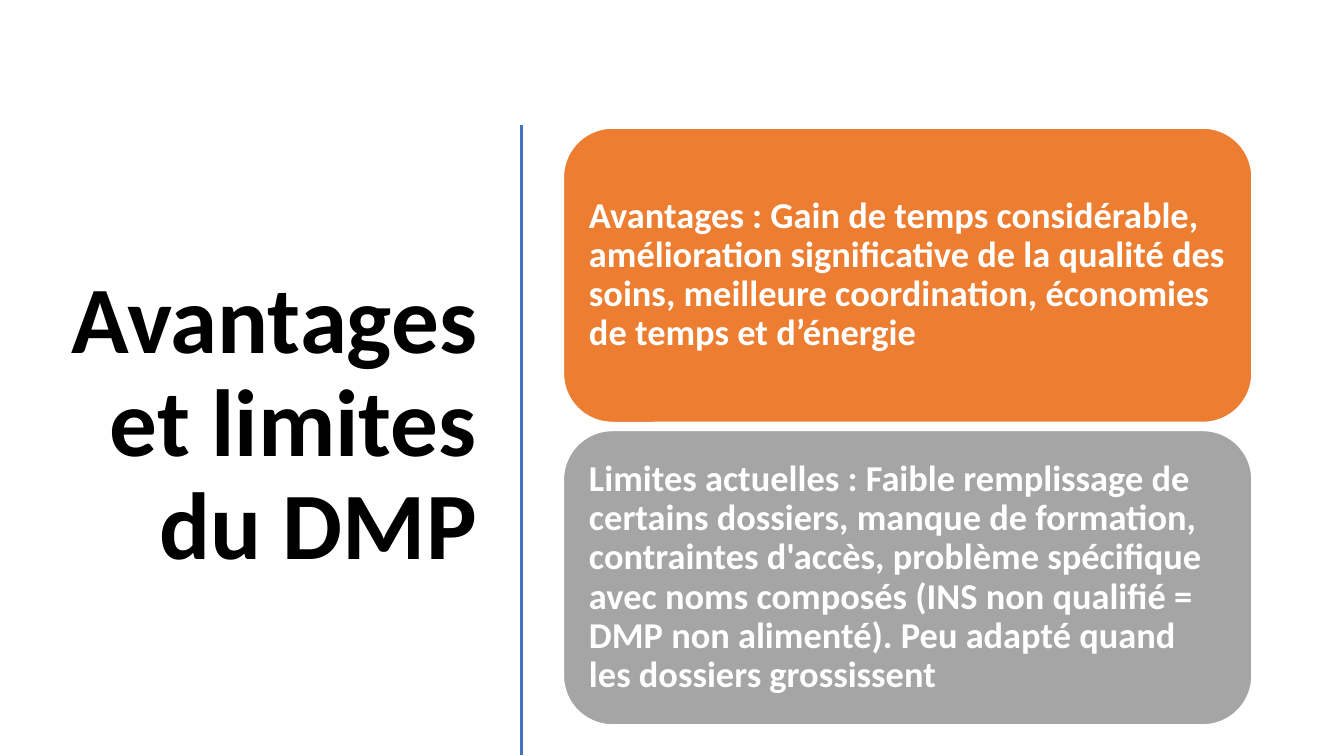
from lxml.etree import SubElement
from pptx import Presentation
from pptx.dml.color import RGBColor
from pptx.enum.shapes import MSO_CONNECTOR as Connector, MSO_SHAPE as Shape
from pptx.enum.text import MSO_ANCHOR as Anchor, MSO_AUTO_SIZE as AutoSize, PP_ALIGN as Align
from pptx.oxml.ns import qn
from pptx.util import Pt

COLORS = {
    "black": "000000",
    "white": "FFFFFF",
    "blue": "4472C4",
    "orange": "ED7D31",
    "gray": "A5A5A5",
}
FONT = "Calibri"
CARDS = [
    ("orange", "Avantages : Gain de temps considérable, amélioration significative "
               "de la qualité des soins, meilleure coordination, économies de temps "
               "et d’énergie"),
    ("gray", "Limites actuelles : Faible remplissage de certains dossiers, manque de "
             "formation, contraintes d'accès, problème spécifique avec noms composés "
             "(INS non qualifié = DMP non alimenté). Peu adapté quand les dossiers "
             "grossissent"),
]


def color(name):
    return RGBColor.from_string(COLORS[name])


def write_text(box, text, size, ink, align=Align.LEFT, inset=(7.2, 3.6)):
    frame = box.text_frame
    frame.word_wrap = True
    frame.auto_size = AutoSize.NONE
    frame.vertical_anchor = Anchor.MIDDLE
    frame.margin_left = frame.margin_right = Pt(inset[0])
    frame.margin_top = frame.margin_bottom = Pt(inset[1])
    para = frame.paragraphs[0]
    para.alignment = align
    para.line_spacing = 0.9
    para.space_before = para.space_after = Pt(0)
    span = para.add_run()
    span.text = text
    span.font.name = FONT
    span.font.size = Pt(size)
    span.font.bold = True
    span.font.color.rgb = color(ink)


def add_title(page, left, top, width, height):
    title = page.shapes.title
    title.left, title.top = Pt(left), Pt(top)
    title.width, title.height = Pt(width), Pt(height)
    write_text(title, "Avantages et limites du DMP", 68, "black", align=Align.RIGHT)


def add_divider(page, left, top, height):
    divider = page.shapes.add_connector(
        Connector.STRAIGHT, Pt(left), Pt(top), Pt(left), Pt(top + height))
    divider.line.color.rgb = color("blue")
    divider.line.width = Pt(2)
    SubElement(divider._element.spPr, qn("a:effectLst"))


def add_cards(page, left, top, width, height, gap):
    card_height = (height - gap * (len(CARDS) - 1)) / len(CARDS)
    for index, (fill, text) in enumerate(CARDS):
        card_top = top + index * (card_height + gap)
        card = page.shapes.add_shape(
            Shape.ROUNDED_RECTANGLE, Pt(left), Pt(card_top), Pt(width), Pt(card_height))
        card.shadow.inherit = False
        card.fill.solid()
        card.fill.fore_color.rgb = color(fill)
        card.line.color.rgb = color("white")
        card.line.width = Pt(1)
        write_text(card, text, 26, "white", inset=(8, 8))


def main():
    deck = Presentation()
    deck.slide_width, deck.slide_height = Pt(960), Pt(540)
    page = deck.slides.add_slide(deck.slide_layouts.get_by_name("Title Only"))

    # Title on the left, divider, then the two cards
    add_title(page, 37.5, 84.25, 310.5, 440)
    add_divider(page, 372.25, 89.25, 450)
    add_cards(page, 402.5, 91.5, 491.75, 426.25, gap=5.75)

    deck.save("out.pptx")


if __name__ == "__main__":
    main()
